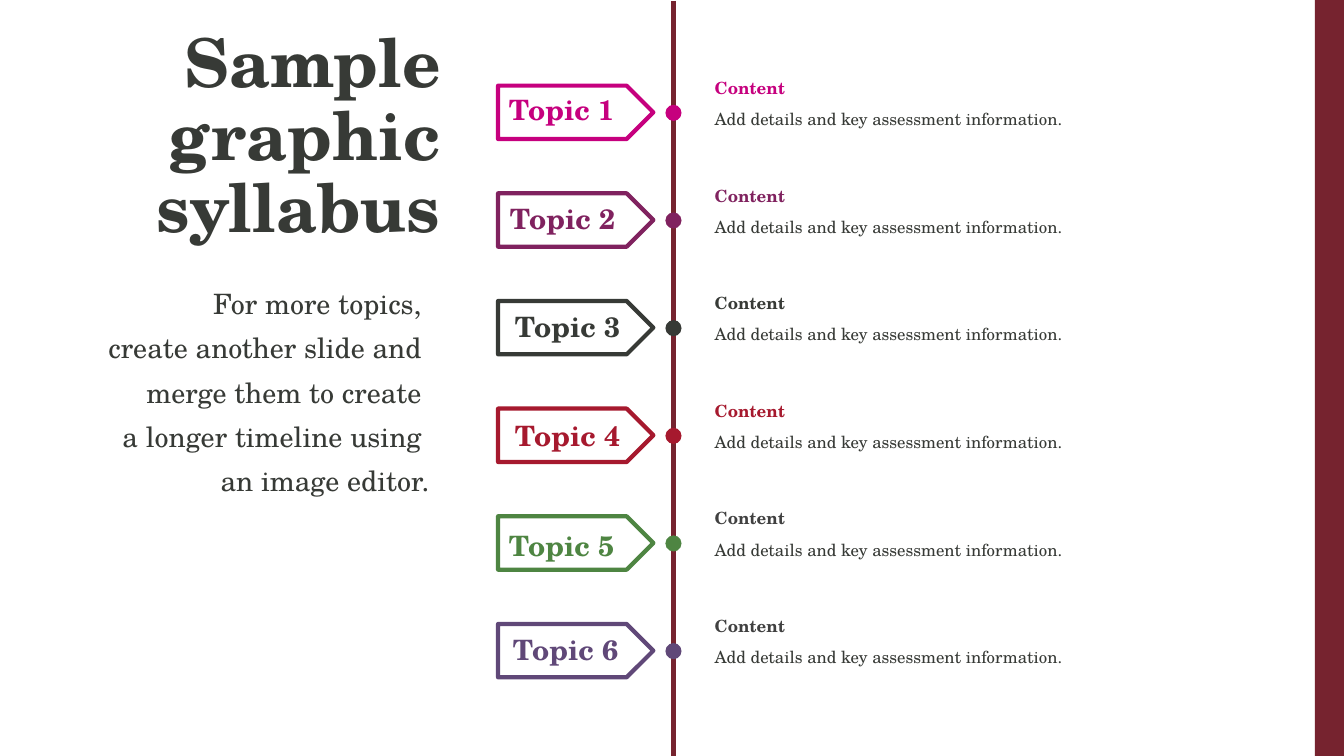
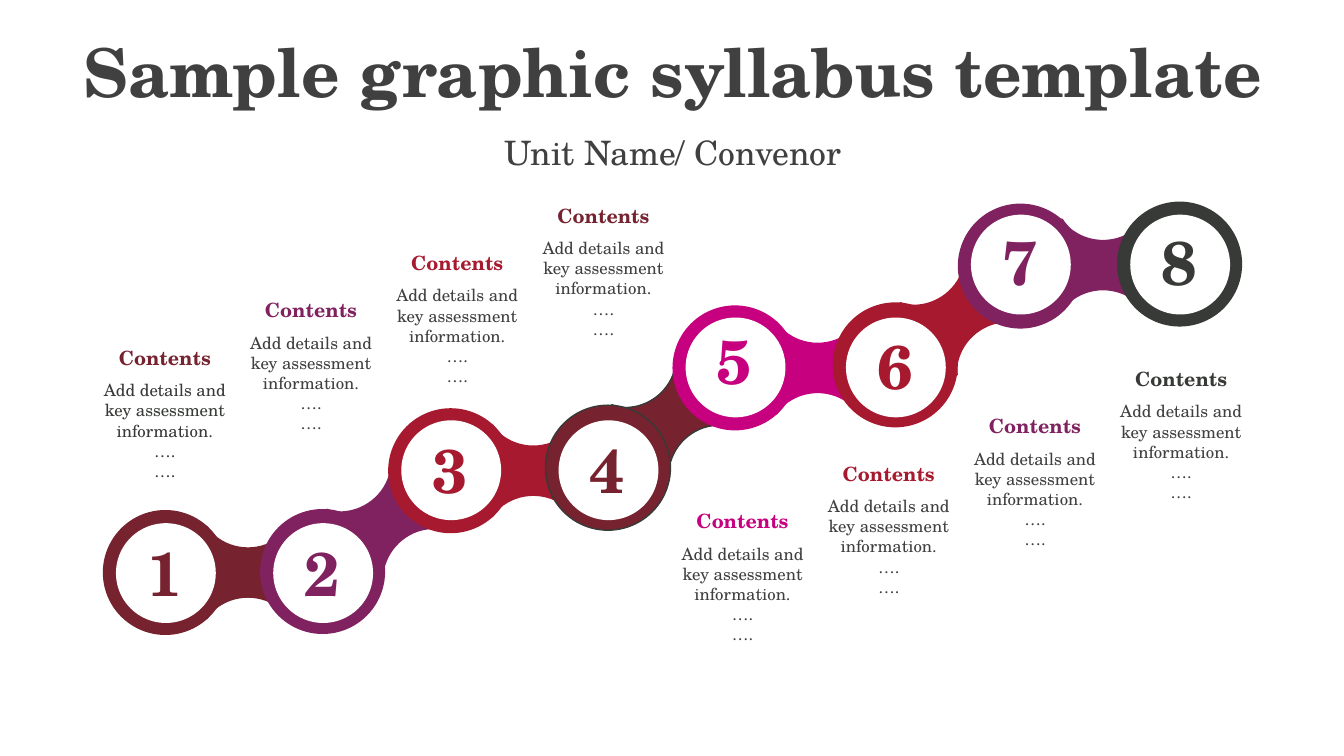
from dataclasses import dataclass
import math

from pptx import Presentation
from pptx import util as u
from pptx.dml.color import RGBColor
from pptx.enum import shapes, text
from pptx.oxml import ns, xmlchemy
from pptx.oxml.xmlchemy import OxmlElement


@dataclass(frozen=True)
class Theme:
    font: str = "TeX Gyre Schola"
    white: str = "FFFFFF"
    ink: str = "373A36"
    grey: str = "404040"
    maroon: str = "76232F"
    plum: str = "80225F"
    red: str = "A6192E"
    pink: str = "C6007E"
    green: str = "4E8542"
    violet: str = "604878"
    title: int = 48
    number: int = 44
    subtitle: int = 24
    lead: int = 20
    heading: int = 14
    small: int = 12


T = Theme()
SHAPE = shapes.MSO_SHAPE
LEFT, CENTER, RIGHT = text.PP_ALIGN.LEFT, text.PP_ALIGN.CENTER, text.PP_ALIGN.RIGHT
DETAILS = "Add details and key assessment information."


def paint(sp, fill, line=None, width=1):
    """Give a shape a flat fill and an optional outline."""
    sp.shadow.inherit = False
    sp.fill.solid()
    sp.fill.fore_color.rgb = RGBColor.from_string(fill)
    if line:
        sp.line.color.rgb = RGBColor.from_string(line)
        sp.line.width = u.Pt(width)
    else:
        sp.line.fill.background()


def write(sp, box, lines, size, color, bold=False, align=CENTER,
          middle=False, leading=None, before=0):
    """Place a text box or placeholder and fill it, one paragraph a line."""
    sp.left, sp.top, sp.width, sp.height = map(u.Inches, box)
    tf = sp.text_frame
    tf.word_wrap = True
    tf.auto_size = text.MSO_AUTO_SIZE.NONE
    tf.vertical_anchor = text.MSO_ANCHOR.MIDDLE if middle else text.MSO_ANCHOR.TOP
    for i, line in enumerate(lines):
        p = tf.add_paragraph() if i else tf.paragraphs[0]
        p.alignment = align
        p.space_before = u.Pt(before)
        if leading:
            p.line_spacing = leading
        r = p.add_run()
        r.text = line
        r.font.name, r.font.size, r.font.bold = T.font, u.Pt(size), bold
        r.font.color.rgb = RGBColor.from_string(color)


prs = Presentation()
prs.slide_width, prs.slide_height = u.Inches(13.33), u.Inches(7.5)
layout = prs.slide_layouts[1]

# Body text without bullets, set once on the master
level = prs.slide_master.element.xpath("p:txStyles/p:bodyStyle/a:lvl1pPr")[0]
level.set("marL", "0")
level.set("indent", "0")
level.replace(level.find(ns.qn("a:buChar")), OxmlElement("a:buNone"))

# ---- Slide 1: vertical timeline ----
s = prs.slides.add_slide(layout)
write(s.shapes.title, (-0.11, 0.22, 4.58, 2.31), ["Sample graphic syllabus"],
      T.title, T.ink, True, RIGHT, middle=True, leading=0.9)
intro = ["For more topics, ", "create another slide and ", "merge them to create ",
         "a longer timeline using ", "an image editor."]
write(s.placeholders[1], (0.6, 2.7, 3.76, 2.42), intro, T.lead, T.ink,
      align=RIGHT, middle=True, leading=0.9, before=10)

# Side band and timeline
band = s.shapes.add_shape(SHAPE.RECTANGLE, u.Inches(13.04), 0, u.Inches(0.29), prs.slide_height)
paint(band, T.maroon)
axis = s.shapes.add_connector(shapes.MSO_CONNECTOR.STRAIGHT, u.Inches(6.68),
                              u.Inches(0.01), u.Inches(6.68), u.Inches(7.5))
axis.line.color.rgb = RGBColor.from_string(T.maroon)
axis.line.width = u.Pt(3)
axis._element.spPr.append(OxmlElement("a:effectLst"))

# Topics: colour, heading colour, label left, label drop below the tag's top
topics = [
    (T.pink, T.pink, 4.94, 0.02),
    (T.plum, T.plum, 4.95, 0.03),
    (T.ink, T.ink, 5.0, 0.04),
    (T.red, T.red, 5.0, 0.05),
    (T.green, T.grey, 4.94, 0.07),
    (T.violet, T.grey, 4.98, 0.04),
]
topic_gap = (6.19 - 0.85) / (len(topics) - 1)
for i, (color, heading_color, label_x, drop) in enumerate(topics):
    y = 0.85 + i * topic_gap
    dot = s.shapes.add_shape(SHAPE.OVAL, *map(u.Inches, (6.6, y + 0.19, 0.16, 0.16)))
    paint(dot, color)
    tag = s.shapes.add_shape(SHAPE.PENTAGON, *map(u.Inches, (4.94, y, 1.54, 0.53)))
    paint(tag, T.white, color, 3)
    for box, line, size, c, bold, align, middle in [
        ((label_x, y + drop, 1.26, 0.44), f"Topic {i + 1}", T.lead, color, True, CENTER, False),
        ((6.99, y - 0.13, 5.42, 0.3), "Content", T.small, heading_color, True, LEFT, True),
        ((6.99, y + 0.18, 5.42, 0.3), DETAILS, T.small, T.ink, False, LEFT, False),
    ]:
        write(s.shapes.add_textbox(0, 0, 0, 0), box, [line], size, c, bold, align, middle)

# ---- Slide 2: rising chain of steps ----
s = prs.slides.add_slide(layout)
write(s.shapes.title, (0.01, 0.33, 13.33, 0.85), ["Sample graphic syllabus template"],
      T.title, T.grey, True, middle=True, leading=0.9)
write(s.placeholders[1], (0.01, 1.32, 13.33, 0.46), ["Unit Name/ Convenor"],
      T.subtitle, T.grey, middle=True, leading=0.8, before=10)

# Steps: colour, outline, ring left and top, number top, centre of the bridge to the next
steps = [
    (T.maroon, None, 1.02, 5.06, 5.26, (2.46, 5.68)),
    (T.plum, None, 2.58, 5.05, 5.26, (3.84, 5.16)),
    (T.red, None, 3.85, 4.05, 4.24, (5.29, 4.67)),
    (T.maroon, T.ink, 5.41, 4.02, 4.24, (6.67, 4.13)),
    (T.pink, None, 6.67, 3.03, 3.15, (8.11, 3.65)),
    (T.red, None, 8.26, 3.0, 3.2, (9.53, 3.11)),
    (T.plum, None, 9.5, 2.02, 2.17, (10.94, 2.63)),
    (T.ink, None, 11.08, 2.0, 2.17, None),
]

# Bridge outline about its centre: square ends, an arc cut from top and bottom
arc = [(0.51 * math.sin(math.radians(a)), 0.51 * math.cos(math.radians(a)) - 0.76)
       for a in range(-45, 46, 5)]
top_edge = [(-0.5, -0.46), (-0.4, -0.46), *arc, (0.4, -0.46), (0.5, -0.46)]
bridge_outline = top_edge + [(-x, -y) for x, y in top_edge]

# Bridges and rings
for i, (color, outline, x, y, _, bridge) in enumerate(steps):
    if bridge:
        points = [(u.Inches(bridge[0] + dx), u.Inches(bridge[1] + dy))
                  for dx, dy in bridge_outline]
        fb = s.shapes.build_freeform(*points[0])
        fb.add_line_segments(points[1:], close=True)
        sp = fb.convert_to_shape()
        sp.rotation = -38.2 if i % 2 else 0
        paint(sp, color, outline)
    ring = s.shapes.add_shape(SHAPE.OVAL, *map(u.Inches, (x, y, 1.24, 1.24)))
    paint(ring, color, outline)

# White discs, numbers and contents
for i, (color, _, x, _, number_y, _) in enumerate(steps):
    disc_y = 5.19 - 1.02 * (i // 2)
    disc = s.shapes.add_shape(SHAPE.OVAL, *map(u.Inches, (x + 0.13, disc_y, 0.99, 0.99)))
    paint(disc, T.white)
    half, place = divmod(i, 4)
    text_x = (0.84, 6.57)[half] + 1.45 * place
    text_y = (3.38, 5.0)[half] - 0.47 * place
    for box, lines, size, c, bold in [
        ((x + 0.31, number_y, 0.61, 0.84), [str(i + 1)], T.number, color, True),
        ((text_x, text_y, 1.59, 0.34), ["Contents"], T.heading, color, True),
        ((text_x, text_y + 0.34, 1.59, 1.11), [DETAILS, "….", "…."], T.small,
         T.grey if i else T.ink, False),
    ]:
        write(s.shapes.add_textbox(0, 0, 0, 0), box, lines, size, c, bold)

prs.save("out.pptx")
